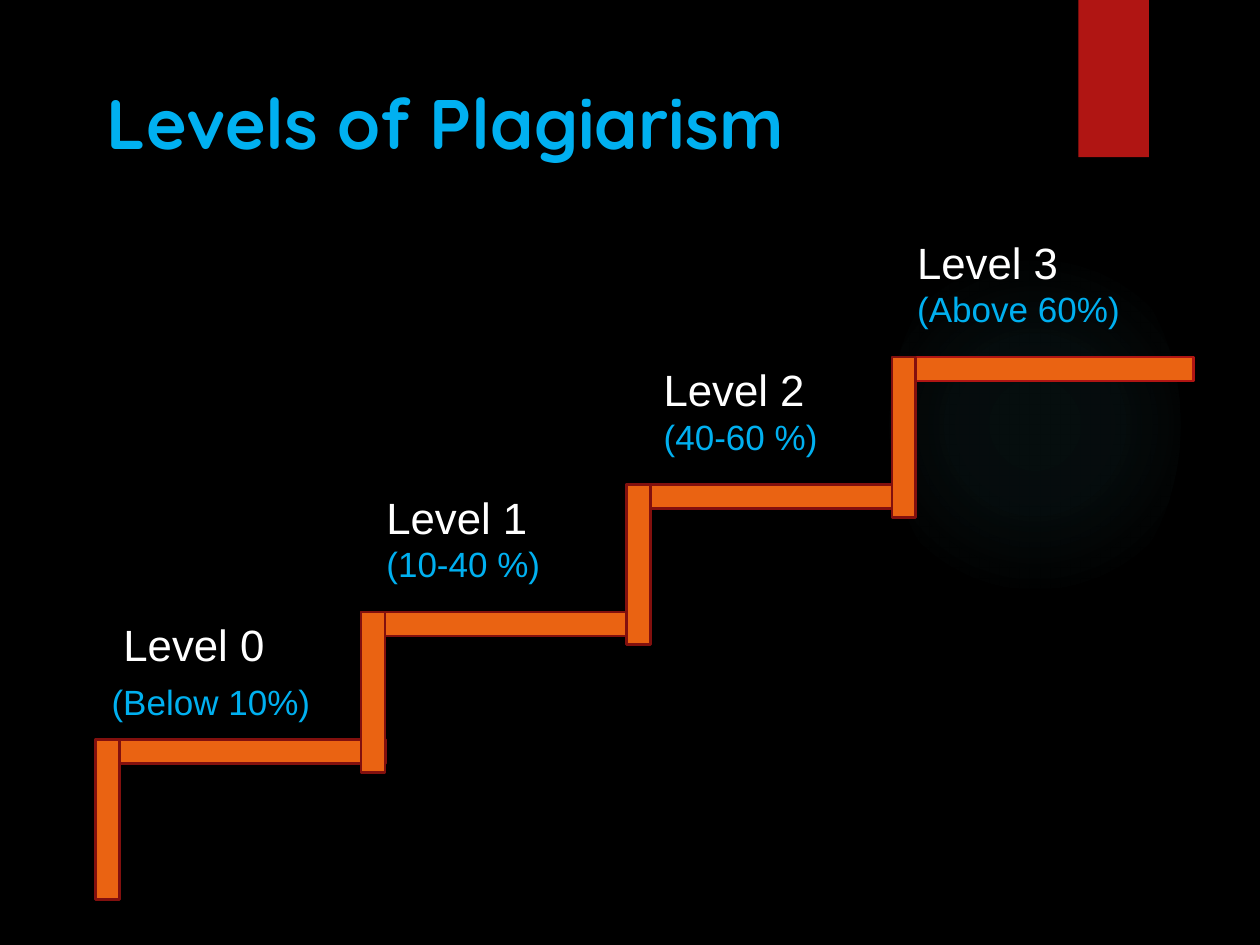
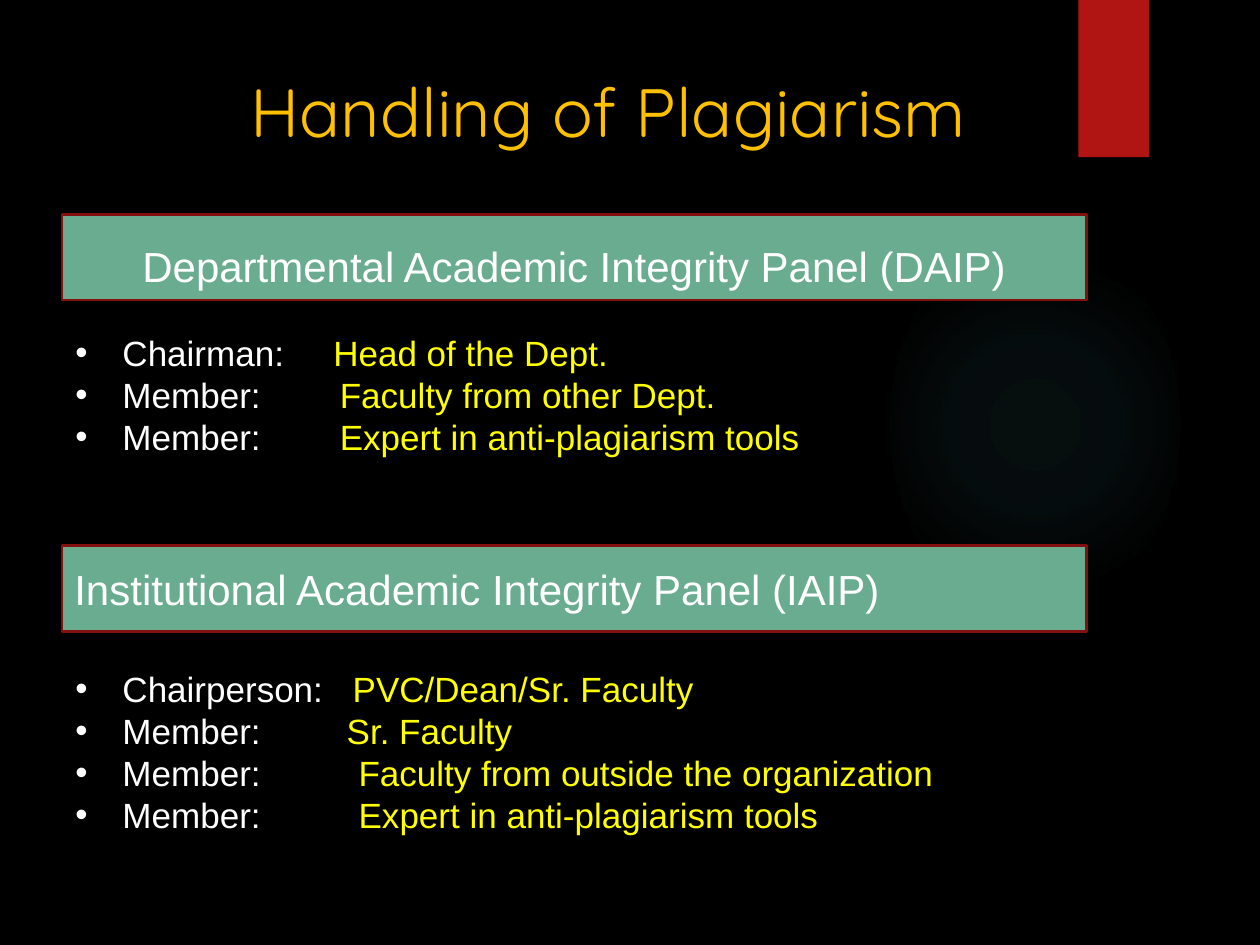
from lxml import etree
from pptx import Presentation
from pptx.dml.color import RGBColor
from pptx.enum.shapes import MSO_SHAPE
from pptx.enum.text import MSO_ANCHOR, MSO_AUTO_SIZE, PP_ALIGN
from pptx.oxml import parse_xml
from pptx.oxml.ns import qn
from pptx.util import Cm, Pt

RECT, OVAL = MSO_SHAPE.RECTANGLE, MSO_SHAPE.OVAL
LEFT, CENTER = PP_ALIGN.LEFT, PP_ALIGN.CENTER
TOP, MIDDLE = MSO_ANCHOR.TOP, MSO_ANCHOR.MIDDLE
NO_FIT = MSO_AUTO_SIZE.NONE

BLACK, WHITE, RED, DARK_RED = "000000", "FFFFFF", "B01513", "82100E"
ORANGE, GREEN, BLUE, GOLD, YELLOW = "EA6312", "6AAC90", "00B0F0", "FFC000", "FFFF00"

GLOW_STOPS = "".join(
    f'<a:gs pos="{pos}000"><a:srgbClr val="50B9C1"><a:alpha val="{alpha}000"/></a:srgbClr></a:gs>'
    for pos, alpha in [(0, 7), (36, 6), (69, 0)])
GLOW = ('<a:gradFill xmlns:a="http://schemas.openxmlformats.org/drawingml/2006/main">'
        f'<a:gsLst>{GLOW_STOPS}</a:gsLst><a:path path="circle">'
        '<a:fillToRect l="50000" t="50000" r="50000" b="50000"/></a:path></a:gradFill>')


def add_text(p, text, size=20, color=WHITE, font="Arial", bold=False):
    r = p.add_run()
    r.text = text
    r.font.size = Pt(size)
    r.font.name = font
    r.font.bold = bold
    r.font.color.rgb = RGBColor.from_string(color)


def add_block(s, x, y, w, h, fill, line=None, kind=RECT):
    sp = s.shapes.add_shape(kind, Cm(x), Cm(y), Cm(w), Cm(h))
    sp.shadow.inherit = False
    sp.fill.solid()
    sp.fill.fore_color.rgb = RGBColor.from_string(fill)
    if line:
        sp.line.color.rgb = RGBColor.from_string(line)
        sp.line.width = Pt(1.5)
    else:
        sp.line.fill.background()
    return sp


prs = Presentation()
prs.slide_width, prs.slide_height = Cm(25.4), Cm(19.05)
background = prs.slide_master.background.fill
background.solid()
background.fore_color.rgb = RGBColor.from_string(BLACK)

titles = [
    ("Levels of Plagiarism", 1.9, 1.47, 16.28, 40, BLUE, True),
    ("Handling of Plagiarism", 4.8, 1.27, 16.8, 39, GOLD, False),
]
for text, x, y, w, size, color, bold in titles:
    s = prs.slides.add_slide(prs.slide_layouts[5])
    glow = add_block(s, 17.93, 4.65, 5.87, 7.82, BLACK, kind=OVAL)
    solid = glow._element.spPr.find(qn("a:solidFill"))
    solid.getparent().replace(solid, parse_xml(GLOW))
    add_block(s, 21.74, 0, 1.42, 3.17, RED)
    title = s.shapes.title
    title.left, title.top, title.width, title.height = Cm(x), Cm(y), Cm(w), Cm(1.95)
    tf = title.text_frame
    tf.auto_size = NO_FIT
    tf.vertical_anchor = TOP
    tf.paragraphs[0].alignment = LEFT
    add_text(tf.paragraphs[0], text, size, color, "Quicksand", bold)

levels_slide, panels_slide = prs.slides

BAR = 0.48
levels = [
    ("Level 0", "(Below 10%)", 2.0, 0.24, 6),
    ("Level 1", "(10-40 %)", 7.54, 0, 0),
    ("Level 2", "(40-60 %)", 13.13, 0, 0),
    ("Level 3", "(Above 60%)", 18.24, 0, 0),
]
for i, (level, share, label_x, indent, gap) in enumerate(levels):
    x, y = 1.93 + 5.35 * i, 14.91 - 2.57 * i
    last = i == len(levels) - 1
    tread_x = x + BAR / 2 if last else x
    add_block(levels_slide, tread_x, y, 5.84, BAR, ORANGE, RED if last else DARK_RED)
    add_block(levels_slide, x, y, BAR, 3.23, ORANGE, DARK_RED)
    label = levels_slide.shapes.add_textbox(Cm(label_x), Cm(y - 2.58), Cm(6.86), Cm(2.18))
    tf = label.text_frame
    tf.word_wrap = True
    p = tf.paragraphs[0]
    p._p.get_or_add_pPr().set("indent", str(Cm(indent)))
    add_text(p, level, 25)
    p = tf.add_paragraph()
    p.space_before = Pt(gap)
    add_text(p, share, 20, BLUE)

panels = [
    ("Departmental Academic Integrity Panel (DAIP)", CENTER, 0.46, 4.32, 6.55, [
        ("Chairman:", "Head of the Dept.", 5.2),
        ("Member:", "Faculty from other Dept.", 5.33),
        ("Member:", "Expert in anti-plagiarism tools", 5.33),
    ]),
    ("Institutional Academic Integrity Panel (IAIP)", LEFT, 0.13, 11.0, 13.33, [
        ("Chairperson:", "PVC/Dean/Sr. Faculty", 5.59),
        ("Member:", "Sr. Faculty", 5.47),
        ("Member:", "Faculty from outside the organization", 5.71),
        ("Member:", "Expert in anti-plagiarism tools", 5.71),
    ]),
]
for name, align, inset, banner_y, list_y, members in panels:
    banner = add_block(panels_slide, 1.25, banner_y, 20.65, 1.73, GREEN, DARK_RED)
    tf = banner.text_frame
    tf.word_wrap = True
    tf.vertical_anchor = MIDDLE
    tf.margin_top = Cm(inset)
    tf.paragraphs[0].alignment = align
    add_text(tf.paragraphs[0], name, 24)

    box = panels_slide.shapes.add_textbox(Cm(1.27), Cm(list_y), Cm(22.78), Cm(0.25 + 0.85 * len(members)))
    tf = box.text_frame
    tf.word_wrap = True
    for i, (role, person, tab) in enumerate(members):
        p = tf.add_paragraph() if i else tf.paragraphs[0]
        pPr = p._p.get_or_add_pPr()
        pPr.set("marL", str(Cm(0.95)))
        pPr.set("indent", str(Cm(-0.95)))
        etree.SubElement(pPr, qn("a:buFont")).set("typeface", "Arial")
        etree.SubElement(pPr, qn("a:buChar")).set("char", "•")
        stop = etree.SubElement(etree.SubElement(pPr, qn("a:tabLst")), qn("a:tab"))
        stop.set("pos", str(Cm(tab)))
        stop.set("algn", "l")
        add_text(p, role + "\t")
        add_text(p, person, color=YELLOW)

prs.save("out.pptx")
